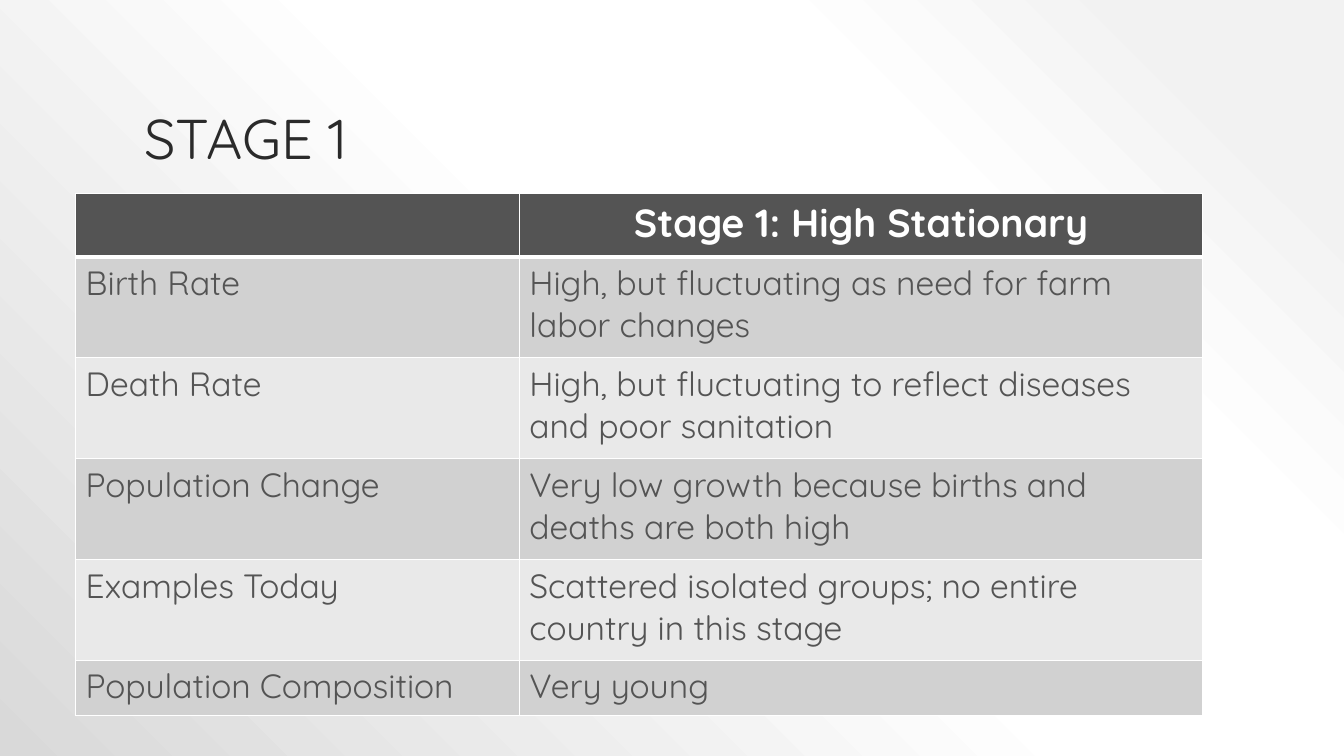
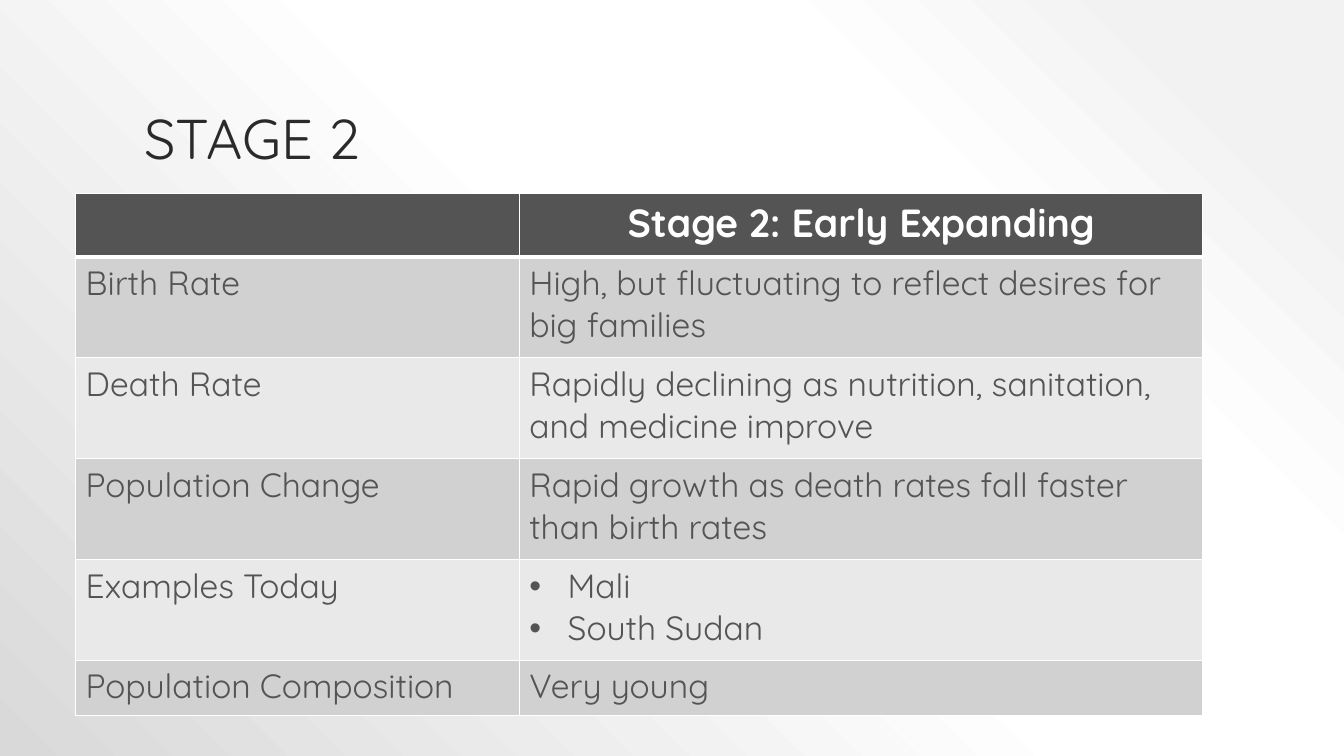
from lxml.etree import SubElement
from pptx import Presentation
from pptx.dml.color import RGBColor
from pptx.enum.text import MSO_ANCHOR, PP_ALIGN
from pptx.oxml import parse_xml
from pptx.oxml.ns import nsdecls, qn
from pptx.util import Inches, Pt

TOPICS = ["Birth Rate", "Death Rate", "Population Change", "Examples Today",
          "Population Composition"]
STAGES = [
    ("STAGE 1", "Stage 1: High Stationary", [
        "High, but fluctuating as need for farm labor changes",
        "High, but fluctuating to reflect diseases and poor sanitation",
        "Very low growth because births and deaths are both high",
        "Scattered isolated groups; no entire country in this stage",
        "Very young",
    ]),
    ("STAGE 2", "Stage 2: Early Expanding", [
        "High, but fluctuating to reflect desires for big families",
        "Rapidly declining as nutrition, sanitation, and medicine improve",
        "Rapid growth as death rates fall faster than birth rates",
        ["Mali", "South Sudan"],
        "Very young",
    ]),
]

FONT = "Quicksand"
COLORS = {"title": "2A2A2A", "dark": "545454", "odd": "D1D1D1",
          "even": "E9E9E9", "white": "FFFFFF"}
BACKDROP = [(10, "F2F2F2"), (28, "FFFFFF"), (48, "FFFFFF"), (100, "D9D9D9")]
WIDTH, HEIGHT = 13.33, 7.5
TITLE_BOX = (WIDTH * 0.1, 0.3, WIDTH * 0.8, 1.45)
TABLE_CORNER = (0.75, 1.92)
COLUMNS = [4.4, 6.78]
ROWS = [0.63, 1, 1, 1, 1, 0.55]
INDENT = 0.38


def paint_backdrop(master):
    master.background.fill.gradient()
    old = next(master.element.iter(qn("a:gradFill")))
    stops = "".join(f'<a:gs pos="{share * 1000}"><a:srgbClr val="{color}"/></a:gs>'
                    for share, color in BACKDROP)
    old.getparent().replace(old, parse_xml(
        f'<a:gradFill {nsdecls("a")} rotWithShape="1"><a:gsLst>{stops}</a:gsLst>'
        '<a:path path="circle"><a:fillToRect l="100000" b="100000"/></a:path>'
        '</a:gradFill>'))


def write(paragraph, text, size, color, bold=False):
    run = paragraph.add_run()
    run.text = text
    run.font.name = FONT
    run.font.size = Pt(size)
    run.font.bold = bold
    run.font.color.rgb = RGBColor.from_string(COLORS[color])


def add_bullet(paragraph):
    properties = paragraph._p.get_or_add_pPr()
    properties.set("marL", str(Inches(INDENT)))
    properties.set("indent", str(-Inches(INDENT)))
    SubElement(properties, qn("a:buFont")).set("typeface", "Arial")
    SubElement(properties, qn("a:buChar")).set("char", "•")


def style_cell(cell, row):
    edges = {"L": 1, "R": 1, "T": 3 if row == 1 else 1, "B": 3 if row == 0 else 1}
    for side, points in edges.items():
        cell._tc.get_or_add_tcPr().append(parse_xml(
            f'<a:ln{side} {nsdecls("a")} w="{Pt(points)}"><a:solidFill>'
            f'<a:srgbClr val="{COLORS["white"]}"/></a:solidFill></a:ln{side}>'))
    band = "dark" if row == 0 else "odd" if row % 2 else "even"
    cell.fill.solid()
    cell.fill.fore_color.rgb = RGBColor.from_string(COLORS[band])


def fill_cell(cell, row, content):
    style_cell(cell, row)
    frame = cell.text_frame
    lines = content if isinstance(content, list) else [content]
    for index, line in enumerate(lines):
        paragraph = frame.add_paragraph() if index else frame.paragraphs[0]
        if row == 0:
            paragraph.alignment = PP_ALIGN.CENTER
        if isinstance(content, list):
            add_bullet(paragraph)
        if line:
            write(paragraph, line, *((28, "white", True) if row == 0 else (24, "dark")))


def add_title(slide, title):
    frame = slide.shapes.add_textbox(*map(Inches, TITLE_BOX)).text_frame
    frame.word_wrap = True
    frame.vertical_anchor = MSO_ANCHOR.BOTTOM
    frame.paragraphs[0].line_spacing = 0.9
    write(frame.paragraphs[0], title, 40, "title")


def add_stage_table(slide, heading, facts):
    bounds = (*TABLE_CORNER, sum(COLUMNS), sum(ROWS))
    table = slide.shapes.add_table(len(ROWS), len(COLUMNS), *map(Inches, bounds)).table
    for column, width in zip(table.columns, COLUMNS):
        column.width = Inches(width)
    for row, height in zip(table.rows, ROWS):
        row.height = Inches(height)
    for row, pair in enumerate([("", heading), *zip(TOPICS, facts)]):
        for column, content in enumerate(pair):
            fill_cell(table.cell(row, column), row, content)


def main():
    deck = Presentation()
    deck.slide_width, deck.slide_height = Inches(WIDTH), Inches(HEIGHT)
    paint_backdrop(deck.slide_master)
    for title, heading, facts in STAGES:
        slide = deck.slides.add_slide(deck.slide_layouts[6])
        add_title(slide, title)
        add_stage_table(slide, heading, facts)
    deck.save("out.pptx")


if __name__ == "__main__":
    main()
